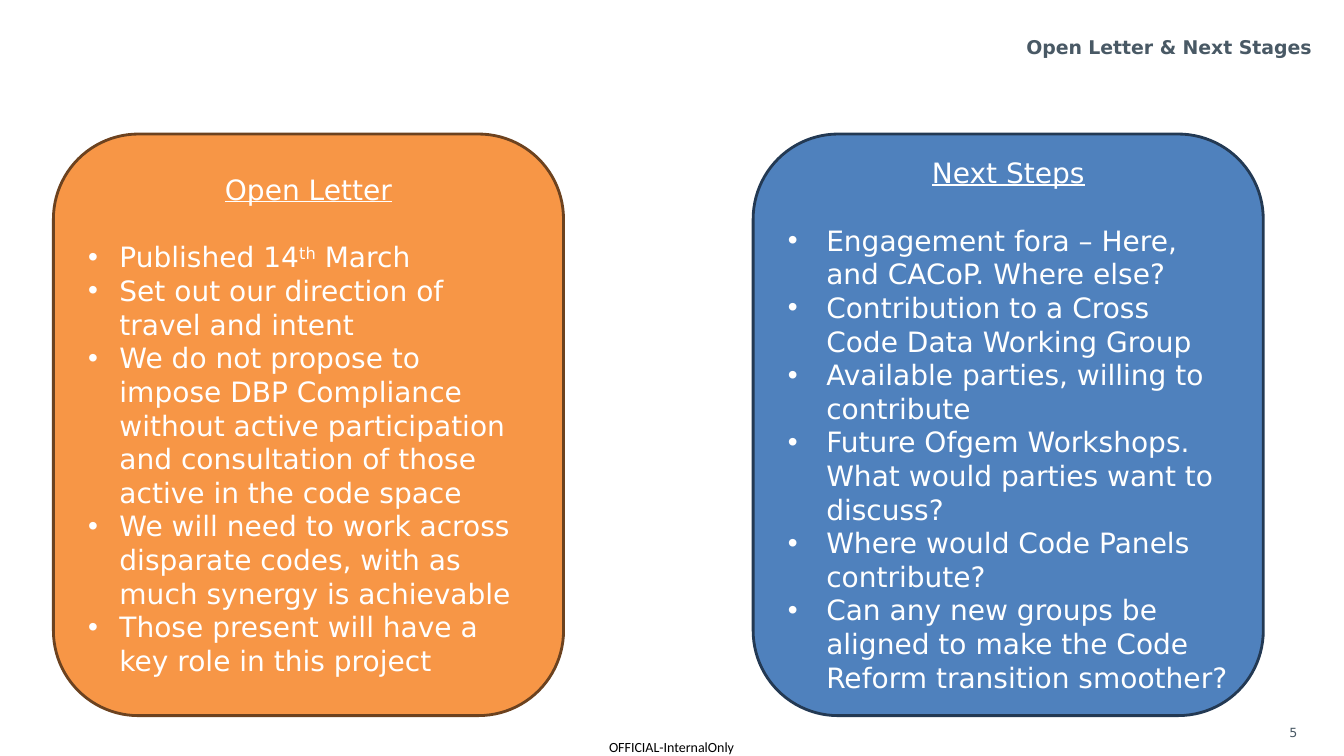
from dataclasses import dataclass

from lxml.etree import SubElement
from pptx import Presentation
from pptx.dml.color import RGBColor
from pptx.enum.shapes import MSO_SHAPE as Shape
from pptx.enum.text import MSO_ANCHOR as Anchor, PP_ALIGN as Align
from pptx.oxml.ns import qn
from pptx.util import Inches, Pt


@dataclass(frozen=True)
class Theme:
    font: str = "DejaVu Sans"
    footer_font: str = "Calibri"
    slate: str = "495965"
    white: str = "FFFFFF"
    black: str = "000000"
    orange: str = "F79646"
    brown: str = "6C421F"
    blue: str = "4F81BD"
    navy: str = "233953"
    title: float = 13.5
    body: float = 20
    footer: float = 10
    number: float = 9
    line_pitch: float = 24


theme = Theme()


def write(paragraph, text, size=theme.body, color=theme.white, font=theme.font,
          align=Align.LEFT, bold=False, underline=False, superscript=False):
    paragraph.alignment = align
    run = paragraph.add_run()
    run.text = text
    run.font.size, run.font.name = Pt(size), font
    run.font.bold, run.font.underline = bold, underline
    run.font.color.rgb = RGBColor.from_string(color)
    if superscript:
        run.font._element.set("baseline", "30000")


presentation = Presentation()
presentation.slide_width, presentation.slide_height = Inches(13.33), Inches(7.5)
slide = presentation.slides.add_slide(presentation.slide_layouts[5])

# Title
title = slide.shapes.title
title.left, title.top = Inches(4.36), Inches(0.31)
title.width, title.height = Inches(8.75), Inches(0.31)
title.text_frame.vertical_anchor = Anchor.MIDDLE
write(title.text_frame.paragraphs[0], "Open Letter & Next Stages", size=theme.title,
      color=theme.slate, align=Align.RIGHT, bold=True)

# Two panels: heading, fill, outline, bullet indent, bullets made of text pieces
panels = [
    ("Open Letter", theme.orange, theme.brown, 0.31, [
        ["Published 14", "th", " March"],
        ["Set out our direction of travel and intent"],
        ["We do not propose to impose DBP Compliance without active participation "
         "and consultation of those active in the code space"],
        ["We will need to work across disparate codes, with as much synergy is achievable"],
        ["Those present will have a key role in this project"],
    ]),
    ("Next Steps", theme.blue, theme.navy, 0.38, [
        ["Engagement fora – Here, and CACoP. Where else?"],
        ["Contribution to a Cross Code Data Working Group"],
        ["Available parties, willing to contribute"],
        ["Future Ofgem Workshops. What would parties want to discuss?"],
        ["Where would Code Panels contribute?"],
        ["Can any new groups be aligned to make the Code Reform transition smoother?"],
    ]),
]
first_left, column_step = 0.53, 6.94

for column, (heading, fill, outline, indent, bullets) in enumerate(panels):
    panel = slide.shapes.add_shape(
        Shape.ROUNDED_RECTANGLE, Inches(first_left + column * column_step),
        Inches(1.33), Inches(5.06), Inches(5.77))
    panel.shadow.inherit = False
    panel.fill.solid()
    panel.fill.fore_color.rgb = RGBColor.from_string(fill)
    panel.line.color.rgb = RGBColor.from_string(outline)
    panel.line.width = Pt(2)
    frame = panel.text_frame
    frame.word_wrap, frame.vertical_anchor = True, Anchor.MIDDLE

    # Heading, followed by a gap of one line
    paragraph = frame.paragraphs[0]
    write(paragraph, heading, align=Align.CENTER, underline=True)
    paragraph.line_spacing = paragraph.space_after = Pt(theme.line_pitch)

    for pieces in bullets:
        paragraph = frame.add_paragraph()
        paragraph.line_spacing = Pt(theme.line_pitch)
        properties = paragraph._p.get_or_add_pPr()
        properties.set("marL", str(Inches(indent)))
        properties.set("indent", str(-Inches(indent)))
        SubElement(properties, qn("a:buFont")).set("typeface", "Arial")
        SubElement(properties, qn("a:buChar")).set("char", "•")
        for piece in pieces:
            write(paragraph, piece, superscript=piece == "th")

# Slide number
number = slide.shapes.add_textbox(Inches(12.69), Inches(7.14), Inches(0.6), Inches(0.29))
write(number.text_frame.paragraphs[0], "5", size=theme.number, color=theme.slate)

# Classification footer
footer = slide.shapes.add_textbox(Inches(6.04), Inches(7.33), Inches(1.28), Inches(0.17))
frame = footer.text_frame
frame.margin_left = frame.margin_right = frame.margin_top = frame.margin_bottom = 0
write(frame.paragraphs[0], "OFFICIAL-InternalOnly", size=theme.footer,
      color=theme.black, font=theme.footer_font)

presentation.save("out.pptx")
